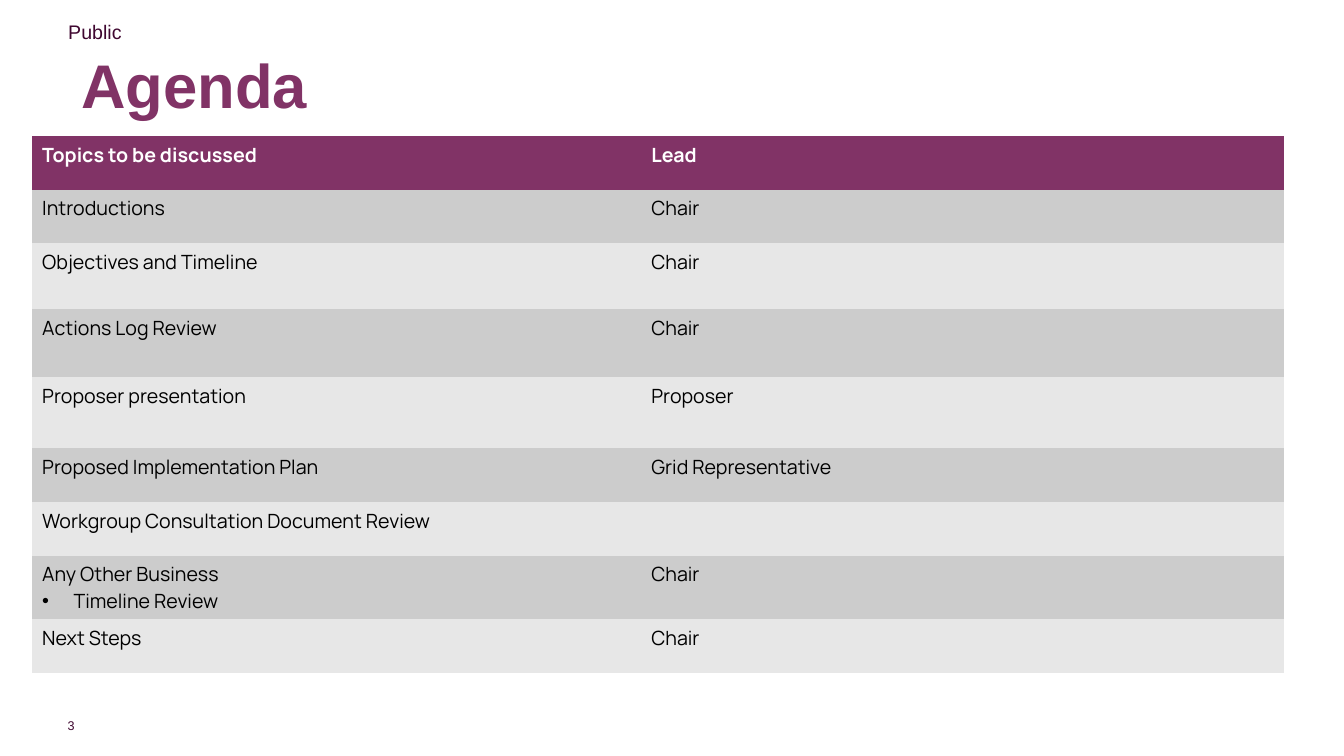
"""Build the workgroup agenda slide."""
from dataclasses import dataclass

from lxml import etree
from pptx import Presentation
from pptx import util as u
from pptx.dml.color import RGBColor
from pptx.enum import text
from pptx.oxml.ns import qn

HEADER = ("Topics to be discussed", "Lead")
AGENDA = [
    (["Introductions"], "Chair", 1.35),
    (["Objectives and Timeline"], "Chair", 1.66),
    (["Actions Log Review"], "Chair", 1.71),
    (["Proposer presentation"], "Proposer", 1.8),
    (["Proposed Implementation Plan"], "Grid Representative", 1.35),
    (["Workgroup Consultation Document Review"], "", 1.35),
    (["Any Other Business", "Timeline Review"], "Chair", 1.6),
    (["Next Steps"], "Chair", 1.35),
]
HEADER_HEIGHT = 1.35
COLUMN_WIDTHS = (15.35, 16.2)
TABLE_LEFT, TABLE_TOP = 0.81, 3.43
BULLET_INDENT = 0.79
NO_GRID_STYLE = "{2D5ABB26-0587-4C30-8999-92F81FD0307C}"


@dataclass(frozen=True)
class Theme:
    """Hold the colours, fonts and type sizes of the slide."""
    plum: str = "813366"
    dark: str = "3F0730"
    white: str = "FFFFFF"
    black: str = "000000"
    bands: tuple = ("CCCCCC", "E7E7E7")
    heading_font: str = "Arial"
    table_font: str = "Manrope"
    title_size: int = 44
    body_size: int = 14
    number_size: int = 9


THEME = Theme()


def add_span(para, words, font, size, colour, bold=False):
    """Add one styled run to a paragraph."""
    span = para.add_run()
    span.text = words
    span.font.name = font
    span.font.size = u.Pt(size)
    span.font.bold = bold
    span.font.color.rgb = RGBColor.from_string(colour)


def add_label(page, place, words, size, colour, bold=False, inset=True):
    """Add a one-line text box and return it with its paragraph."""
    box = page.shapes.add_textbox(*map(u.Cm, place))
    frame = box.text_frame
    frame.word_wrap = inset
    if not inset:
        frame.margin_left = frame.margin_right = 0
        frame.margin_top = frame.margin_bottom = 0
    para = frame.paragraphs[0]
    add_span(para, words, THEME.heading_font, size, colour, bold)
    return frame, para


def add_bullet(para):
    """Give a paragraph a round bullet with a hanging indent."""
    properties = para._p.get_or_add_pPr()
    properties.set("marL", str(u.Cm(BULLET_INDENT)))
    properties.set("indent", str(-u.Cm(BULLET_INDENT)))
    etree.SubElement(properties, qn("a:buFont")).set("typeface", THEME.heading_font)
    etree.SubElement(properties, qn("a:buChar")).set("char", "•")


def fill_cell(cell, lines, fill, colour, bold=False):
    """Fill a cell, with every line after the first as a bullet."""
    cell.fill.solid()
    cell.fill.fore_color.rgb = RGBColor.from_string(fill)
    for index, line in enumerate(filter(None, lines)):
        frame = cell.text_frame
        para = frame.add_paragraph() if index else frame.paragraphs[0]
        if index:
            add_bullet(para)
        add_span(para, line, THEME.table_font, THEME.body_size, colour, bold)


def add_agenda(page):
    """Add the agenda table with its header and banded rows."""
    heights = [HEADER_HEIGHT] + [height for _, _, height in AGENDA]
    size = (sum(COLUMN_WIDTHS), sum(heights))
    frame = page.shapes.add_table(len(heights), len(COLUMN_WIDTHS),
                                  *map(u.Cm, (TABLE_LEFT, TABLE_TOP, *size)))
    table = frame.table
    table._tbl.tblPr.find(qn("a:tableStyleId")).text = NO_GRID_STYLE
    for column, width in zip(table.columns, COLUMN_WIDTHS):
        column.width = u.Cm(width)
    for row, height in zip(table.rows, heights):
        row.height = u.Cm(height)
    for column, heading in enumerate(HEADER):
        fill_cell(table.cell(0, column), [heading], THEME.plum, THEME.white, True)
    for index, (topics, lead, _) in enumerate(AGENDA):
        band = THEME.bands[index % 2]
        for column, lines in enumerate((topics, [lead])):
            fill_cell(table.cell(index + 1, column), lines, band, THEME.black)


def main():
    """Build and save the deck."""
    deck = Presentation()
    deck.slide_width, deck.slide_height = u.Cm(33.87), u.Cm(19.05)
    page = deck.slides.add_slide(deck.slide_layouts[6])
    number, para = add_label(page, (1.5, 18.08, 0.38, 0.38), "3",
                             THEME.number_size, THEME.dark, inset=False)
    number.vertical_anchor = text.MSO_ANCHOR.MIDDLE
    para.alignment = text.PP_ALIGN.RIGHT
    add_label(page, (1.47, 0.38, 12.7, 0.86), "Public", THEME.body_size, THEME.dark)
    title, para = add_label(page, (1.8, 1.02, 26.95, 2.41), "Agenda",
                            THEME.title_size, THEME.plum, bold=True)
    title.vertical_anchor = text.MSO_ANCHOR.MIDDLE
    para.line_spacing = 0.9
    add_agenda(page)
    deck.save("out.pptx")


if __name__ == "__main__":
    main()
